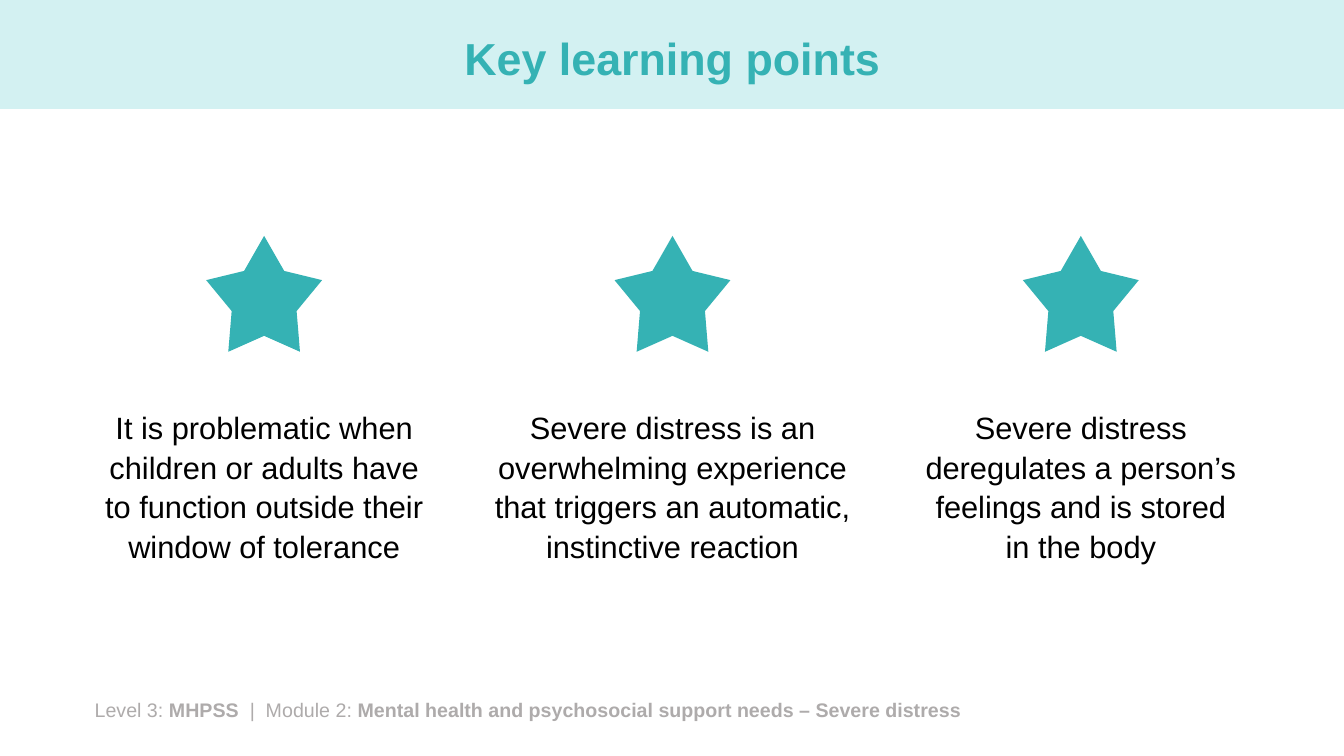
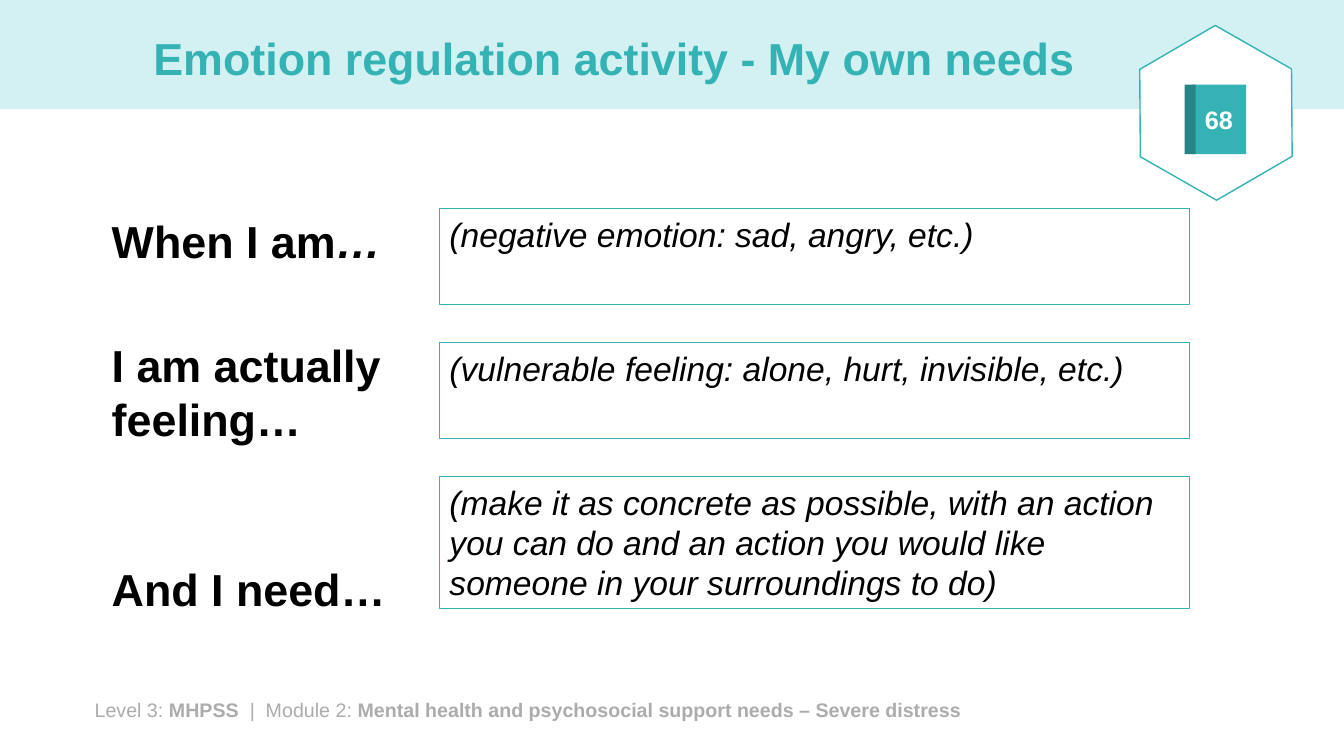
"""Build two training slides on severe distress with a shared band, title and footer."""
import dataclasses
import typing

import pptx
import pptx.dml.color
import pptx.enum.shapes
import pptx.enum.text
import pptx.slide
import pptx.util

Inches = pptx.util.Inches
Pt = pptx.util.Pt
Kind = pptx.enum.shapes.MSO_SHAPE
Align = pptx.enum.text.PP_ALIGN
Anchor = pptx.enum.text.MSO_ANCHOR

COLORS = {
    "band": "D3F1F2",
    "teal": "35B2B4",
    "spine": "278587",
    "grey": "AEABAB",
    "black": "000000",
    "white": "FFFFFF",
}
WIDTH, HEIGHT = 13.33, 7.5
CENTER, PITCH = 2.62, 4.05
STAR = 1.15
ROW_TOP, ROW_STEP = 2.07, 1.33

Box = tuple[float, float, float, float]
Run = tuple[str, dict[str, bool]]


@dataclasses.dataclass
class Style:
    size: float
    color: str = "black"
    font: dict[str, bool] = dataclasses.field(default_factory=dict)
    para: dict[str, typing.Any] = dataclasses.field(default_factory=dict)
    frame: dict[str, typing.Any] = dataclasses.field(default_factory=dict)


@dataclasses.dataclass
class Point:
    text: str
    width: float


@dataclasses.dataclass
class Row:
    label: list[Run]
    top: float
    width: float
    hint: str
    height: float


BOLD = {"bold": True}
TITLE = Style(32, "teal", BOLD, {"alignment": Align.CENTER, "line_spacing": 0.9},
              {"vertical_anchor": Anchor.MIDDLE})
FOOTER = Style(14, "grey")
POINT = Style(22, para={"alignment": Align.CENTER, "line_spacing": 1.07})
LABEL = Style(32, font=BOLD)
HINT = Style(24, font={"italic": True}, para={"alignment": Align.LEFT},
             frame={"vertical_anchor": Anchor.TOP})
PAGE = Style(18, "white", BOLD, {"alignment": Align.CENTER},
             {"vertical_anchor": Anchor.MIDDLE})

FOOT: list[Run] = [
    ("Level 3: ", {}),
    ("MHPSS ", BOLD),
    (" |  Module 2: ", {}),
    ("Mental health and psychosocial support needs – Severe distress", BOLD),
]
POINTS = [
    Point("It is problematic when children or adults have to function "
          "outside their window of tolerance", 3.41),
    Point("Severe distress is an overwhelming experience that triggers "
          "an automatic, instinctive reaction", 3.88),
    Point("Severe distress deregulates a person’s feelings and is stored in the body", 3.39),
]
ROWS = [
    Row([("When I am", {}), ("…", {"italic": True})], 2.07, 3.61,
        "(negative emotion: sad, angry, etc.)", 0.95),
    Row([("I am actually feeling…", {})], 3.3, 3.02,
        "(vulnerable feeling: alone, hurt, invisible, etc.)", 0.95),
    Row([("And I need…", {})], 5.52, 5.39,
        "(make it as concrete as possible, with an action you can do and "
        "an action you would like someone in your surroundings to do)", 1.31),
]


def tint(name: str) -> pptx.dml.color.RGBColor:
    """Return the named colour."""
    return pptx.dml.color.RGBColor.from_string(COLORS[name])


def apply(target: typing.Any, values: dict[str, typing.Any]) -> None:
    """Set each value as an attribute of the target."""
    for name, value in values.items():
        setattr(target, name, value)


def write(shape: typing.Any, runs: list[Run], style: Style) -> None:
    """Fill a shape with one styled paragraph."""
    frame = shape.text_frame
    apply(frame, {"word_wrap": True, **style.frame})
    para = frame.paragraphs[0]
    apply(para, style.para)
    for text, extra in runs:
        run = para.add_run()
        run.text = text
        apply(run.font, {"name": "Arial", "size": Pt(style.size), **style.font, **extra})
        run.font.color.rgb = tint(style.color)


def label(slide: pptx.slide.Slide, box: Box, runs: list[Run], style: Style) -> None:
    """Add a text box."""
    write(slide.shapes.add_textbox(*map(Inches, box)), runs, style)


def draw(shapes: typing.Any, kind: Kind, box: Box, fill: str = "",
         line: float = 0) -> typing.Any:
    """Add a preset shape with an optional fill and teal outline."""
    shape = shapes.add_shape(kind, *map(Inches, box))
    shape.shadow.inherit = False
    if fill:
        shape.fill.solid()
        shape.fill.fore_color.rgb = tint(fill)
    else:
        shape.fill.background()
    if line:
        shape.line.color.rgb = tint("teal")
        shape.line.width = Pt(line)
    else:
        shape.line.fill.background()
    return shape


def start(deck: typing.Any, title: str, width: float) -> pptx.slide.Slide:
    """Add a slide with the shared band, footer and title."""
    slide = deck.slides.add_slide(deck.slide_layouts[6])
    draw(slide.shapes, Kind.RECTANGLE, (0, 0, WIDTH, 1.08), "band")
    label(slide, (0.84, 6.87, 11.35, 0.34), FOOT, FOOTER)
    label(slide, (0.92, 0.13, width, 0.95), [(title, {})], TITLE)
    return slide


def learn(deck: typing.Any) -> None:
    """Build the slide of starred learning points."""
    slide = start(deck, "Key learning points", 11.5)
    for index, point in enumerate(POINTS):
        mid = CENTER + index * PITCH
        star = draw(slide.shapes, Kind.STAR_5_POINT,
                    (mid - STAR / 2, 2.34, STAR, STAR), "teal")
        star.adjustments[0] = 0.28
        label(slide, (mid - point.width / 2, 3.98, point.width, 1.69),
              [(point.text, {})], POINT)


def badge(slide: pptx.slide.Slide) -> None:
    """Add the hexagon with the workbook page number."""
    hexagon = draw(slide.shapes, Kind.HEXAGON, (11.19, 0.37, 1.74, 1.5), "white", 1)
    hexagon.adjustments[0] = 0.29
    hexagon.rotation = 29.7
    book = slide.shapes.add_group_shape()
    cover = draw(book.shapes, Kind.RECTANGLE, (11.82, 0.84, 0.54, 0.69), "teal")
    write(cover, [("68", {})], PAGE)
    draw(book.shapes, Kind.RECTANGLE, (11.75, 0.84, 0.11, 0.69), "spine")


def needs(deck: typing.Any) -> None:
    """Build the slide of sentences to complete."""
    slide = start(deck, "Emotion regulation activity - My own needs", 10.35)
    badge(slide)
    for index, row in enumerate(ROWS):
        label(slide, (1.01, row.top, row.width, 0.64), row.label, LABEL)
        box = draw(slide.shapes, Kind.RECTANGLE,
                   (4.36, ROW_TOP + index * ROW_STEP, 7.44, row.height), line=0.75)
        write(box, [(row.hint, {})], HINT)


def main() -> None:
    """Build and save the deck."""
    deck = pptx.Presentation()
    apply(deck, {"slide_width": Inches(WIDTH), "slide_height": Inches(HEIGHT)})
    learn(deck)
    needs(deck)
    deck.save("out.pptx")


if __name__ == "__main__":
    main()
